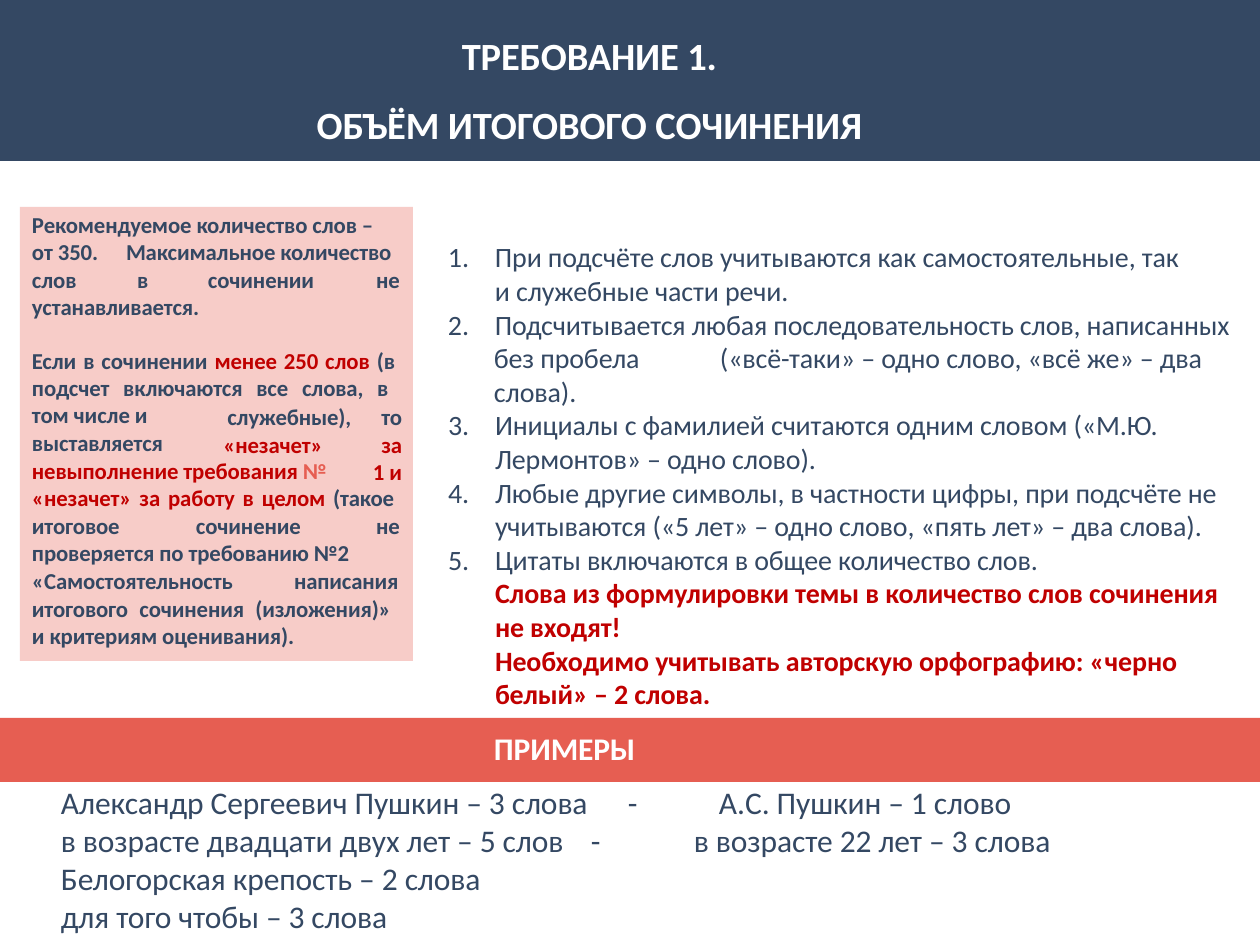
"""Build a slide on the required length of the final essay."""
from dataclasses import dataclass

from lxml import etree
from pptx import Presentation
from pptx.dml.color import RGBColor
from pptx.enum.shapes import MSO_SHAPE
from pptx.enum.text import MSO_AUTO_SIZE, PP_ALIGN
from pptx.oxml.ns import qn
from pptx.util import Emu, Pt

RECTANGLE = MSO_SHAPE.RECTANGLE
GROW = MSO_AUTO_SIZE.SHAPE_TO_FIT_TEXT
LEFT, CENTER, RIGHT, JUSTIFY = PP_ALIGN.LEFT, PP_ALIGN.CENTER, PP_ALIGN.RIGHT, PP_ALIGN.JUSTIFY
EMU_PER_PX = 914400 / 126
NAVY, CORAL, PINK, RED, WHITE = "344863", "E65E52", "F7CCC8", "C00000", "FFFFFF"
FONT = "Calibri"
TRACKING = "-5"
LIST_INDENT, LIST_HANGING = 49, -47


@dataclass
class Span:
    text: str
    color: str | None = None
    bold: bool | None = None


@dataclass
class Para:
    spans: list[Span]
    before: float = 0
    align: int = LEFT
    indent: int = 0
    number: int | None = None
    tabs: tuple[int, ...] = ()
    line_spacing: float = 1.0


@dataclass
class TextBlock:
    place: tuple[int, int, int, int]
    size: int
    paras: list[Para]
    color: str = NAVY
    bold: bool = False


@dataclass
class Band:
    place: tuple[int, int, int, int]
    color: str


def px(length: int) -> Emu:
    return Emu(round(length * EMU_PER_PX))


def rgb(color: str) -> RGBColor:
    return RGBColor.from_string(color)


def plain(text: str, **settings) -> Para:
    return Para([Span(text)], **settings)


def item(number: int, text: str, before: float = 0) -> Para:
    return plain(text, number=number, before=before, indent=LIST_INDENT)


def warning(text: str) -> Para:
    return Para([Span(text, RED, True)], indent=LIST_INDENT)


def side(top: int, height: int, paras: list[Para], left: int = 32, width: int = 370) -> TextBlock:
    return TextBlock((left, top, width, height), 13, paras, bold=True)


def draw_band(page, band: Band) -> None:
    box = page.shapes.add_shape(RECTANGLE, *map(px, band.place))
    box.shadow.inherit = False
    box.fill.solid()
    box.fill.fore_color.rgb = rgb(band.color)
    box.line.fill.background()


def add_span(para, span: Span, block: TextBlock) -> None:
    for index, piece in enumerate(span.text.split("\n")):
        if index:
            para.add_line_break()
        run = para.add_run()
        run.text = piece
        run.font.name = FONT
        run.font.size = Pt(block.size)
        run.font.bold = block.bold if span.bold is None else span.bold
        run.font.color.rgb = rgb(span.color or block.color)
        run._r.get_or_add_rPr().set("spc", TRACKING)


def format_para(para, model: Para) -> None:
    para.alignment = model.align
    para.line_spacing = model.line_spacing
    para.space_before = Pt(model.before)
    properties = para._p.get_or_add_pPr()
    if model.indent:
        properties.set("marL", str(px(model.indent)))
    if model.number:
        properties.set("indent", str(px(LIST_HANGING)))
        etree.SubElement(properties, qn("a:buFont"), typeface="+mj-lt")
        etree.SubElement(properties, qn("a:buAutoNum"), type="arabicPeriod", startAt=str(model.number))
    if model.tabs:
        stops = etree.SubElement(properties, qn("a:tabLst"))
        for stop in model.tabs:
            etree.SubElement(stops, qn("a:tab"), pos=str(px(stop)), algn="l")


def draw_text(page, block: TextBlock) -> None:
    frame = page.shapes.add_textbox(*map(px, block.place)).text_frame
    frame.word_wrap = True
    frame.auto_size = GROW
    frame.margin_left = frame.margin_right = frame.margin_bottom = 0
    frame.margin_top = px(1)
    for index, model in enumerate(block.paras):
        para = frame.add_paragraph() if index else frame.paragraphs[0]
        format_para(para, model)
        for span in model.spans:
            add_span(para, span, block)


BANDS = [
    Band((0, 0, 1260, 161), NAVY),
    Band((0, 718, 1260, 64), CORAL),
    Band((20, 207, 393, 454), PINK),
]

HEADINGS = [
    TextBlock((192, 8, 795, 135), 22, [
        plain("ТРЕБОВАНИЕ 1.", align=CENTER, line_spacing=1.5, before=1.1),
        plain("ОБЪЁМ ИТОГОВОГО СОЧИНЕНИЯ", align=CENTER, line_spacing=1.5),
    ], WHITE, True),
    TextBlock((493, 728, 146, 42), 18, [plain("ПРИМЕРЫ", before=1, indent=1)], WHITE, True),
]

RULES = [
    TextBlock((446, 239, 794, 105), 16, [
        item(1, "При подсчёте слов учитываются как самостоятельные, так\nи служебные части речи.", 1.1),
        item(2, "Подсчитывается любая последовательность слов, написанных"),
    ]),
    TextBlock((493, 340, 716, 71), 16, [
        plain("без пробела\t(«всё-таки» – одно слово, «всё же» – два\nслова).",
              before=1.1, indent=1, tabs=(226,)),
    ]),
    TextBlock((446, 407, 798, 306), 16, [
        item(3, "Инициалы с фамилией считаются одним словом («М.Ю. Лермонтов» – одно слово).", 1.1),
        item(4, "Любые другие символы, в частности цифры, при подсчёте не\n"
                "учитываются («5 лет» – одно слово, «пять лет» – два слова)."),
        item(5, "Цитаты включаются в общее количество слов."),
        warning("Слова из формулировки темы в количество слов сочинения\nне входят!"),
        warning("Необходимо учитывать авторскую орфографию: «черно белый» – 2 слова."),
    ]),
]

EXAMPLES = [
    TextBlock((60, 782, 542, 42), 18, [
        plain("Александр Сергеевич Пушкин – 3 слова", before=1, indent=1)]),
    TextBlock((627, 782, 428, 79), 18, [
        plain("-\tА.С. Пушкин – 1 слово", before=1, indent=1, tabs=(91,)),
        plain("в возрасте 22 лет – 3 слова", indent=67),
    ]),
    TextBlock((60, 820, 542, 117), 18, [
        plain("в возрасте двадцати двух лет – 5 слов\t-", before=1, indent=1, tabs=(530,)),
        plain("Белогорская крепость – 2 слова\nдля того чтобы – 3 слова", indent=1),
    ]),
]

SIDE_NOTES = [
    side(210, 30, [plain("Рекомендуемое количество слов –", before=0.9)]),
    side(237, 58, [plain("от 350.\tМаксимальное количество\nслов\t\tв\tсочинении\tне",
                         before=0.9, tabs=(94, 105, 176, 344))]),
    side(292, 140, [
        plain("устанавливается.", before=0.9),
        Para([Span("Если в сочинении "), Span("менее 250 слов ", RED),
              Span("(в \nподсчет включаются все слова, в \nтом числе и")],
             before=15, align=JUSTIFY),
    ]),
    side(428, 30, [plain("выставляется", before=0.9)], width=135),
    side(456, 29, [Para([Span("невыполнение требования ", RED), Span("№", CORAL)], before=0.9)],
         width=318),
    side(402, 86, [
        plain("служебные),\tто", before=0.9, align=RIGHT, tabs=(154,)),
        Para([Span("«незачет»\tза", RED)], align=RIGHT, tabs=(158,)),
        Para([Span("1 и", RED)], align=RIGHT),
    ], left=222, width=180),
    side(483, 86, [
        Para([Span("«незачет» за работу в целом ", RED),
              Span("(такое \nитоговое\tсочинение\tне\nпроверяется по требованию №2")],
             before=0.9, align=JUSTIFY, tabs=(164, 344)),
    ]),
    side(566, 86, [plain("«Самостоятельность\tнаписания\nитогового сочинения (изложения)» \n"
                         "и критериям оценивания).", before=0.9, align=JUSTIFY, tabs=(262,))]),
]


def main() -> None:
    deck = Presentation()
    deck.slide_width, deck.slide_height = px(1260), px(945)
    page = deck.slides.add_slide(deck.slide_layouts[6])
    for band in BANDS:
        draw_band(page, band)
    for block in HEADINGS + RULES + EXAMPLES + SIDE_NOTES:
        draw_text(page, block)
    deck.save("out.pptx")


if __name__ == "__main__":
    main()
